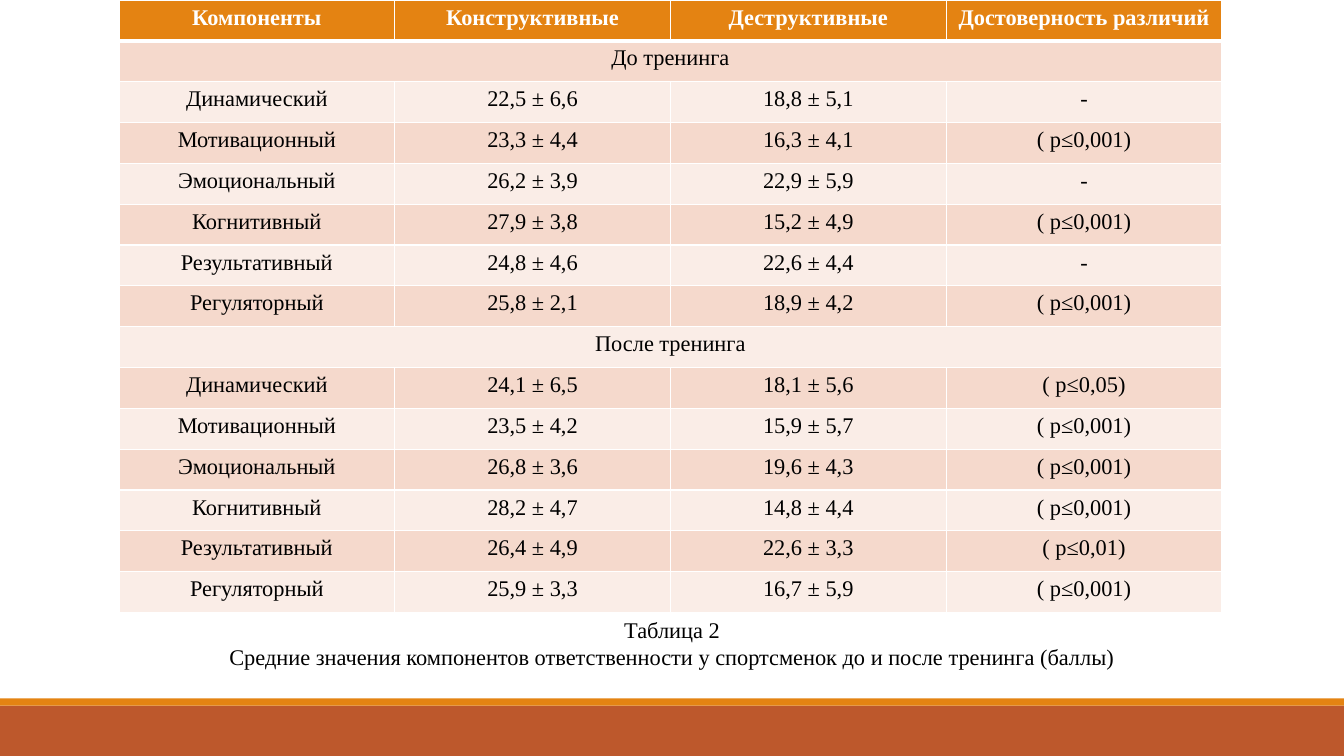
"""Builds a slide with a table of responsibility components before and after training."""
from pptx import Presentation
from pptx.dml.color import RGBColor
from pptx.enum.shapes import MSO_SHAPE
from pptx.enum.text import MSO_ANCHOR, PP_ALIGN
from pptx.oxml import parse_xml
from pptx.oxml.ns import nsdecls
from pptx.util import Inches, Pt

RECTANGLE = MSO_SHAPE.RECTANGLE
CENTER = PP_ALIGN.CENTER
TOP = MSO_ANCHOR.TOP
TITLE_ONLY = 5
WHITE, BLACK, ORANGE, RUST = "FFFFFF", "000000", "E48312", "BD582C"
BAND_FILLS = ["FAEDE7", "F5D9CC"]
TEXT_FORMAT = {"name": "Times New Roman", "size": Pt(16)}

CAPTION = [
    "Таблица 2",
    "Средние значения компонентов ответственности у спортсменок до и после тренинга (баллы)",
]
ROWS = [
    ["Компоненты", "Конструктивные", "Деструктивные", "Достоверность различий"],
    ["До тренинга"],
    ["Динамический", "22,5 ± 6,6", "18,8 ± 5,1", "-"],
    ["Мотивационный", "23,3 ± 4,4", "16,3 ± 4,1", "( p≤0,001)"],
    ["Эмоциональный", "26,2 ± 3,9", "22,9 ± 5,9", "-"],
    ["Когнитивный", "27,9 ± 3,8", "15,2 ± 4,9", "( p≤0,001)"],
    ["Результативный", "24,8 ± 4,6", "22,6 ± 4,4", "-"],
    ["Регуляторный", "25,8 ± 2,1", "18,9 ± 4,2", "( p≤0,001)"],
    ["После тренинга"],
    ["Динамический", "24,1 ± 6,5", "18,1 ± 5,6", "( p≤0,05)"],
    ["Мотивационный", "23,5 ± 4,2", "15,9 ± 5,7", "( p≤0,001)"],
    ["Эмоциональный", "26,8 ± 3,6", "19,6 ± 4,3", "( p≤0,001)"],
    ["Когнитивный", "28,2 ± 4,7", "14,8 ± 4,4", "( p≤0,001)"],
    ["Результативный", "26,4 ± 4,9", "22,6 ± 3,3", "( p≤0,01)"],
    ["Регуляторный", "25,9 ± 3,3", "16,7 ± 5,9", "( p≤0,001)"],
]
COLUMN_COUNT = len(ROWS[0])


def color(value):
    return RGBColor.from_string(value)


def format_paragraph(paragraph, text_color, bold=False):
    paragraph.alignment = CENTER
    for attribute, value in {**TEXT_FORMAT, "bold": bold}.items():
        setattr(paragraph.font, attribute, value)
    paragraph.font.color.rgb = color(text_color)


presentation = Presentation()
presentation.slide_width = Inches(13.33)
presentation.slide_height = Inches(7.5)
slide = presentation.slides.add_slide(presentation.slide_layouts[TITLE_ONLY])

for top, height, fill in [(7, 0.5, RUST), (6.93, 0.07, ORANGE)]:
    band = slide.shapes.add_shape(
        RECTANGLE, 0, Inches(top), presentation.slide_width, Inches(height)
    )
    band.shadow.inherit = False
    band.fill.solid()
    band.fill.fore_color.rgb = color(fill)
    band.line.fill.background()

table = slide.shapes.add_table(
    len(ROWS), COLUMN_COUNT, Inches(1.18), 0, Inches(10.94), Inches(6.08)
).table
for row_index, values in enumerate(ROWS):
    is_header = row_index == 0
    if len(values) == 1:
        table.cell(row_index, 0).merge(table.cell(row_index, COLUMN_COUNT - 1))
    for column_index in range(COLUMN_COUNT):
        cell = table.cell(row_index, column_index)
        top_width = 3 if row_index == 1 else 1
        bottom_width = 3 if is_header else 1
        for side, width in {"L": 1, "R": 1, "T": top_width, "B": bottom_width}.items():
            cell._tc.get_or_add_tcPr().append(parse_xml(
                f'<a:ln{side} {nsdecls("a")} w="{Pt(width)}"><a:solidFill>'
                f'<a:srgbClr val="{WHITE}"/></a:solidFill></a:ln{side}>'
            ))
        cell.fill.solid()
        cell.fill.fore_color.rgb = color(ORANGE if is_header else BAND_FILLS[row_index % 2])
        if column_index < len(values):
            cell.text = values[column_index]
            format_paragraph(
                cell.text_frame.paragraphs[0], WHITE if is_header else BLACK, is_header
            )

caption = slide.shapes.title
caption_position = {
    "left": 0,
    "top": Inches(6.06),
    "width": presentation.slide_width,
    "height": Inches(0.64),
}
for attribute, value in caption_position.items():
    setattr(caption, attribute, value)
caption.text_frame.text = "\n".join(CAPTION)
caption.text_frame.word_wrap = True
caption.text_frame.vertical_anchor = TOP
for paragraph in caption.text_frame.paragraphs:
    format_paragraph(paragraph, BLACK)

presentation.save("out.pptx")
